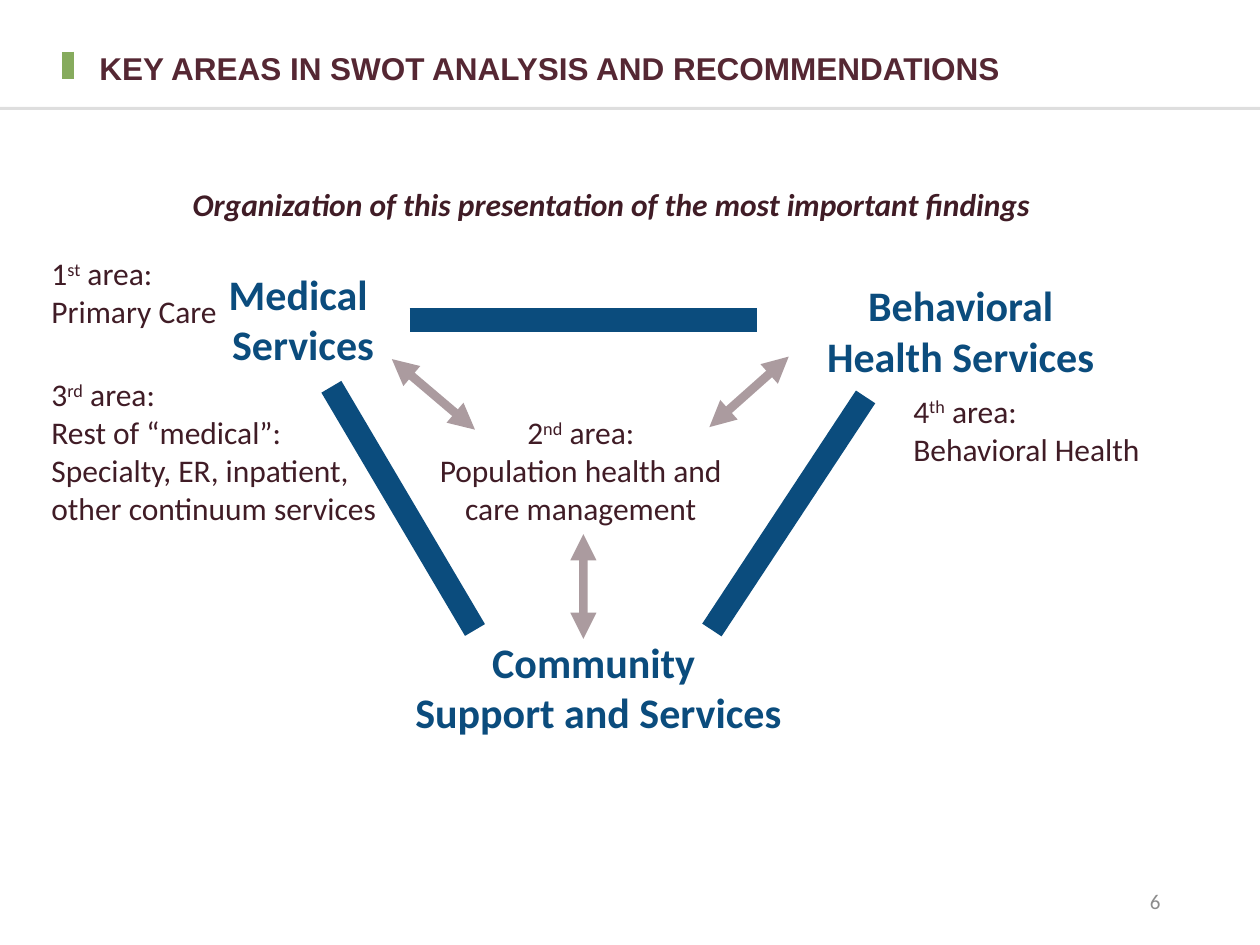
from lxml import etree
from pptx import Presentation
from pptx.dml.color import RGBColor
from pptx.enum.shapes import MSO_CONNECTOR, MSO_SHAPE
from pptx.enum.text import MSO_ANCHOR, MSO_AUTO_SIZE, PP_ALIGN
from pptx.oxml.ns import qn
from pptx.util import Inches, Pt

STRAIGHT = MSO_CONNECTOR.STRAIGHT
LEFT, CENTER, RIGHT = PP_ALIGN.LEFT, PP_ALIGN.CENTER, PP_ALIGN.RIGHT
TOP, MIDDLE = MSO_ANCHOR.TOP, MSO_ANCHOR.MIDDLE

GREEN = RGBColor(0x86, 0xAB, 0x5D)
BLACK = RGBColor(0x00, 0x00, 0x00)
WHITE = RGBColor(0xFF, 0xFF, 0xFF)
PLUM = RGBColor(0x55, 0x27, 0x33)
WINE = RGBColor(0x40, 0x1C, 0x26)
NAVY = RGBColor(0x0B, 0x4C, 0x7D)
GRAY = RGBColor(0x8C, 0x8C, 0x8C)

TITLE = "KEY AREAS IN SWOT ANALYSIS AND RECOMMENDATIONS"
SUBTITLE = "Organization of this presentation of the most important findings"
PAGE_NUMBER = "6"

# Corners of the triangle: lines, box (left, top, width, height)
SERVICES = [
    (["Medical ", "Services"], (1.71, 2.08, 1.39, 0.91)),
    (["Behavioral", "Health Services"], (6.45, 2.17, 2.35, 0.91)),
    (["Community ", "Support and Services"], (3.18, 5, 3.14, 0.91)),
]
# Number, ordinal suffix, description, box, alignment, wrap
AREAS = [
    ("1", "st", "Primary Care", (0.31, 1.97, 1.53, 0.71), LEFT, False),
    ("2", "nd", "Population health and care management",
     (3.34, 3.23, 2.54, 1.01), CENTER, True),
    ("3", "rd", "Rest of “medical”: Specialty, ER, inpatient, other continuum services",
     (0.31, 2.93, 2.94, 1.31), LEFT, True),
]
FOURTH_AREA = ("4", "th", "Behavioral Health")
FOURTH_BOX = (7.15, 3.06, 2.54, 0.71)

# Start and end points
TRIANGLE_SIDES = [
    ((6.87, 3.15), (5.65, 5)),
    ((2.63, 3.07), (3.77, 5)),
    ((3.25, 2.54), (6.01, 2.54)),
]
CENTER_ARROWS = [
    ((4.63, 4.24), (4.63, 5.07)),
    ((6.26, 2.83), (5.63, 3.39)),
    ((3.11, 2.85), (3.77, 3.41)),
]

SERVICE_FONT = {"name": "Calibri", "size": Pt(24), "bold": True}
AREA_FONT = {"name": "Calibri", "size": Pt(18)}
SUBTITLE_FONT = {**AREA_FONT, "bold": True, "italic": True}
TITLE_FONT = {"name": "Arial", "size": Pt(18), "bold": True}
NUMBER_FONT = {"name": "Calibri", "size": Pt(12)}


def add_line(slide, start, end, color, width, opacity=100, arrows=False):
    line = slide.shapes.add_connector(
        STRAIGHT, *(Inches(value) for value in (*start, *end)))
    line.line.color.rgb = color
    line.line.width = Pt(width)
    properties = line._element.spPr
    outline = properties.find(qn("a:ln"))
    if opacity < 100:
        fill = outline.find(".//" + qn("a:srgbClr"))
        etree.SubElement(fill, qn("a:alpha")).set("val", str(opacity * 1000))
    if arrows:
        for tip in ("a:headEnd", "a:tailEnd"):
            etree.SubElement(outline, qn(tip)).set("type", "triangle")
    etree.SubElement(properties, qn("a:effectLst"))


def fill_text(shape, lines, style, color, align=LEFT, anchor=TOP, wrap=True):
    """Write lines, each a list of (text, is_superscript) pieces or a string."""
    frame = shape.text_frame
    frame.word_wrap = wrap
    frame.auto_size = MSO_AUTO_SIZE.NONE if anchor == MIDDLE else MSO_AUTO_SIZE.SHAPE_TO_FIT_TEXT
    frame.vertical_anchor = anchor
    for index, line in enumerate(lines):
        paragraph = frame.add_paragraph() if index else frame.paragraphs[0]
        paragraph.alignment = align
        pieces = [(line, False)] if isinstance(line, str) else line
        for text, superscript in pieces:
            run = paragraph.add_run()
            run.text = text
            for attribute, value in style.items():
                setattr(run.font, attribute, value)
            run.font.color.rgb = color
            if superscript:
                run._r.get_or_add_rPr().set("baseline", "30000")


def add_text(slide, box, *args, **kwargs):
    textbox = slide.shapes.add_textbox(*map(Inches, box))
    fill_text(textbox, *args, **kwargs)
    return textbox


def area_lines(number, suffix, description):
    return [[(number, False), (suffix, True), (" area:", False)], description]


def main():
    deck = Presentation()
    deck.slide_width, deck.slide_height = Inches(10), Inches(7.5)
    slide = deck.slides.add_slide(deck.slide_layouts[6])

    add_line(slide, (0.54, 0.41), (0.54, 0.63), GREEN, 7)
    add_line(slide, (0, 0.86), (10, 0.86), BLACK, 1.75, opacity=12)
    title = add_text(slide, (0.69, 0.27, 8.62, 0.57), [TITLE], TITLE_FONT, PLUM,
                     anchor=MIDDLE)
    title.text_frame.paragraphs[0].line_spacing = 0.9
    add_text(slide, (7.06, 6.95, 2.25, 0.4), [PAGE_NUMBER], NUMBER_FONT, GRAY,
             align=RIGHT, anchor=MIDDLE)

    for lines, box in SERVICES:
        add_text(slide, box, lines, SERVICE_FONT, NAVY, align=CENTER, wrap=False)
    for start, end in TRIANGLE_SIDES:
        add_line(slide, start, end, NAVY, 13.25)

    for *area, box, align, wrap in AREAS:
        add_text(slide, box, area_lines(*area), AREA_FONT, WINE, align=align, wrap=wrap)
    fourth = slide.shapes.add_shape(MSO_SHAPE.RECTANGLE, *map(Inches, FOURTH_BOX))
    fourth.shadow.inherit = False
    fourth.fill.solid()
    fourth.fill.fore_color.rgb = WHITE
    fourth.line.fill.background()
    fill_text(fourth, area_lines(*FOURTH_AREA), AREA_FONT, WINE)

    for start, end in CENTER_ARROWS:
        add_line(slide, start, end, WINE, 5, opacity=44, arrows=True)
    add_text(slide, (1.43, 1.42, 7.13, 0.4), [SUBTITLE], SUBTITLE_FONT, WINE)

    deck.save("out.pptx")


if __name__ == "__main__":
    main()
